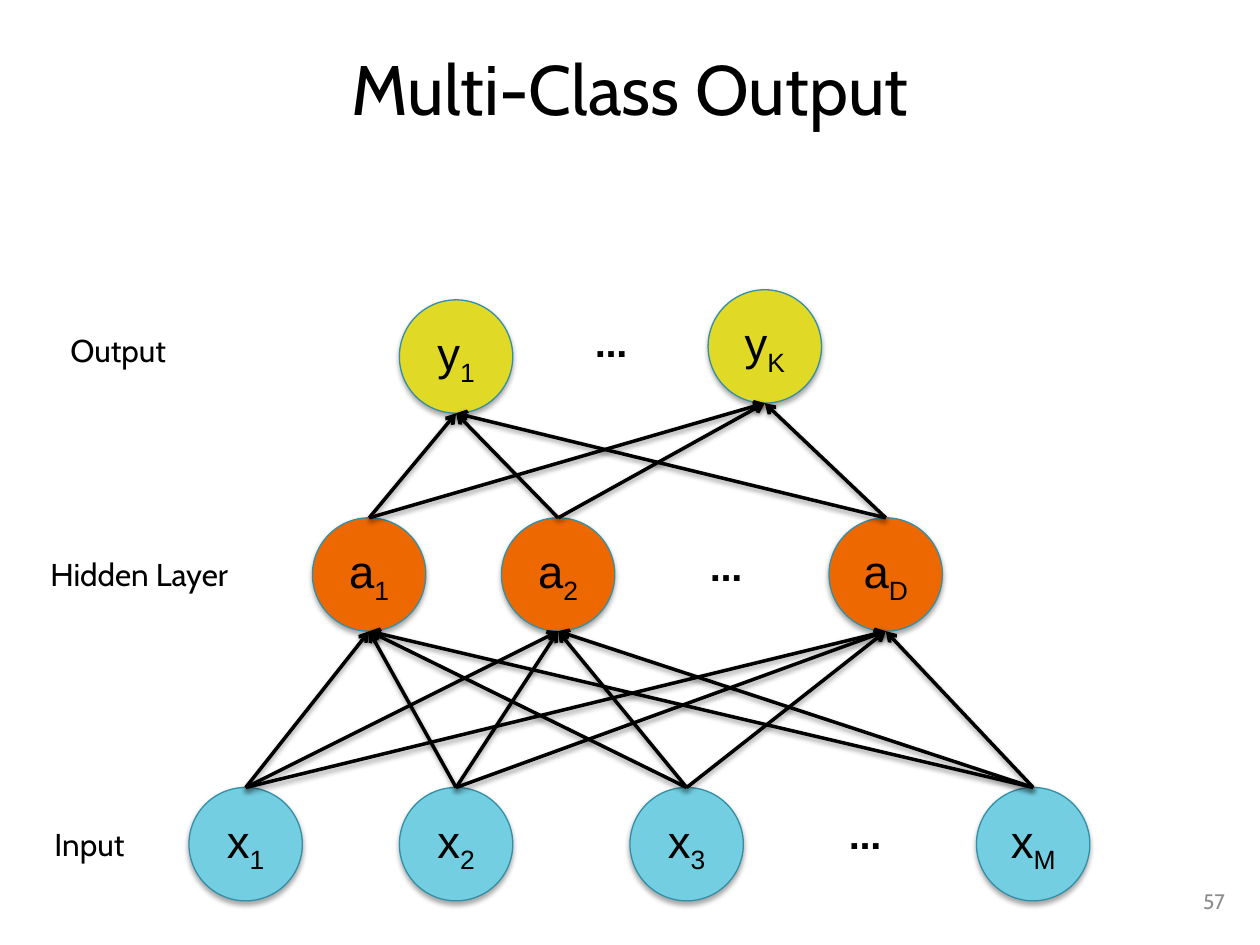
import pptx
import pptx.util
import pptx.dml.color
import pptx.enum.shapes
import pptx.enum.text
import pptx.oxml
import pptx.oxml.ns

Pt = pptx.util.Pt
ALIGN = pptx.enum.text.PP_ALIGN
ANCHOR = pptx.enum.text.MSO_ANCHOR
FIT = pptx.enum.text.MSO_AUTO_SIZE
KIND = pptx.enum.shapes.MSO_SHAPE
LINE = pptx.enum.shapes.MSO_CONNECTOR

COLORS = {"text": "000000", "page": "8C8C8C", "edge": "348FA6",
          "input": "72CEE0", "hidden": "EE6802", "output": "E0D925"}
SIZE = 64.8  # node diameter

# Layers from top to bottom: colour, letter, nodes as (index, left, top)
LAYERS = [
    ("output", "y", [("1", 228.24, 171.36), ("K", 404.64, 165.6)]),
    ("hidden", "a", [("1", 178.56, 295.92), ("2", 286.56, 295.92),
                     ("D", 473.76, 295.92)]),
    ("input", "x", [("1", 108, 450), ("2", 228.24, 450),
                    ("3", 360, 450), ("M", 558, 450)]),
]
# Layer names: text, box, alignment
LABELS = [
    ("Output", (33.12, 185.76, 102.24, 28.8), ALIGN.LEFT),
    ("Hidden Layer", (-1.44, 313.92, 162, 28.8), ALIGN.CENTER),
    ("Input", (0, 468, 102.24, 28.8), ALIGN.CENTER),
]
DOTS = [(328.32, 174.24), (394.56, 302.4), (473.76, 455.76)]


def rgb(name):
    return pptx.dml.color.RGBColor.from_string(COLORS[name])


def add_run(para, text, size, font="Cabin", color="text", bold=False):
    run = para.add_run()
    run.text = text
    run.font.size, run.font.name, run.font.bold = Pt(size), font, bold
    run.font.color.rgb = rgb(color)
    return run


def add_text(slide, text, box, size, align, anchor=ANCHOR.MIDDLE,
             wrap=True, fit=FIT.NONE, **style):
    frame = slide.shapes.add_textbox(*map(Pt, box)).text_frame
    frame.word_wrap, frame.auto_size = wrap, fit
    frame.vertical_anchor = anchor
    para = frame.paragraphs[0]
    para.alignment = align
    add_run(para, text, size, **style)


def add_shadow(props, dist, alpha):
    props.append(pptx.oxml.parse_xml(
        f'<a:effectLst {pptx.oxml.ns.nsdecls("a")}>'
        f'<a:outerShdw blurRad="{Pt(3.1)}" dist="{Pt(dist)}" dir="5400000"'
        f' rotWithShape="0"><a:srgbClr val="000000">'
        f'<a:alpha val="{alpha * 1000}"/></a:srgbClr></a:outerShdw>'
        f'</a:effectLst>'))


def add_node(slide, color, letter, index, left, top):
    node = slide.shapes.add_shape(KIND.FLOWCHART_CONNECTOR, Pt(left), Pt(top),
                                  Pt(SIZE), Pt(SIZE))
    node.fill.solid()
    node.fill.fore_color.rgb = rgb(color)
    node.line.color.rgb = rgb("edge")
    node.line.width = Pt(0.75)
    add_shadow(node._element.spPr, 1.8, 35)
    frame = node.text_frame
    frame.word_wrap = False
    frame.vertical_anchor = ANCHOR.MIDDLE
    para = frame.paragraphs[0]
    para.alignment = ALIGN.CENTER
    add_run(para, letter, 26, "Arial")
    sub = add_run(para, index, 26, "Arial")
    sub.font._element.set("baseline", "-25000")
    return node


def add_link(slide, upper, lower):
    link = slide.shapes.add_connector(LINE.STRAIGHT, 0, 0, 0, 0)
    link.begin_x, link.begin_y = upper.left + upper.width // 2, upper.top + upper.height
    link.end_x, link.end_y = lower.left + lower.width // 2, lower.top
    link.line.color.rgb = rgb("text")
    link.line.width = Pt(2)
    link.line._get_or_add_ln().append(pptx.oxml.parse_xml(
        f'<a:headEnd {pptx.oxml.ns.nsdecls("a")} type="arrow"/>'))
    add_shadow(link._element.spPr, 1.6, 38)


def main():
    deck = pptx.Presentation()
    deck.slide_width, deck.slide_height = Pt(720), Pt(540)
    slide = deck.slides.add_slide(deck.slide_layouts[6])

    # Title and page number
    add_text(slide, "Multi-Class Output", (36, 21.6, 648, 56.88), 40, ALIGN.CENTER)
    add_text(slide, "57", (638.64, 500.4, 68.4, 28.8), 12, ALIGN.RIGHT, color="page")

    # Nodes, then arrows between neighbouring layers
    rows = [[add_node(slide, color, letter, *node) for node in nodes]
            for color, letter, nodes in LAYERS]
    for uppers, lowers in zip(rows, rows[1:]):
        for upper in uppers:
            for lower in lowers:
                add_link(slide, upper, lower)

    # Ellipses and layer names
    for left, top in DOTS:
        add_text(slide, "…", (left, top, 41.76, 38.88), 26, ALIGN.CENTER,
                 wrap=False, fit=FIT.SHAPE_TO_FIT_TEXT, bold=True)
    for text, box, align in LABELS:
        add_text(slide, text, box, 18, align, ANCHOR.TOP,
                 fit=FIT.SHAPE_TO_FIT_TEXT)

    deck.save("out.pptx")


if __name__ == "__main__":
    main()
